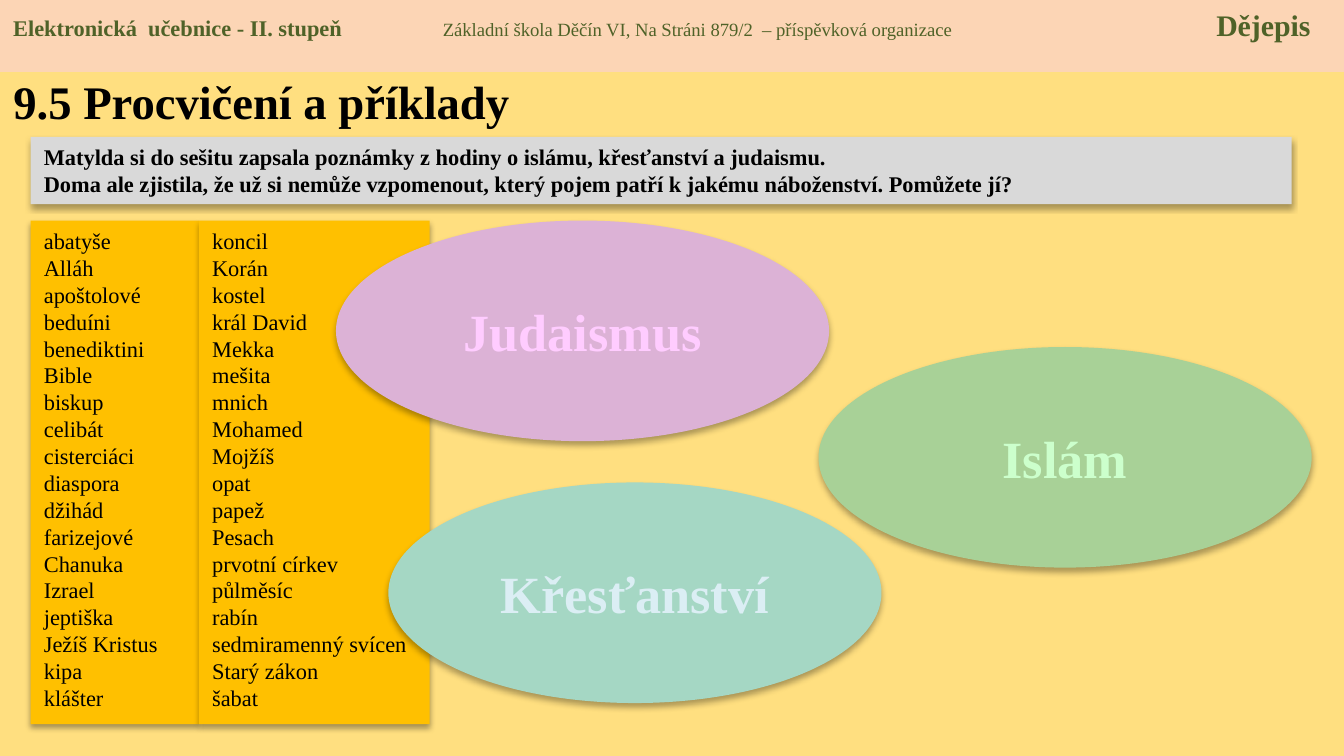
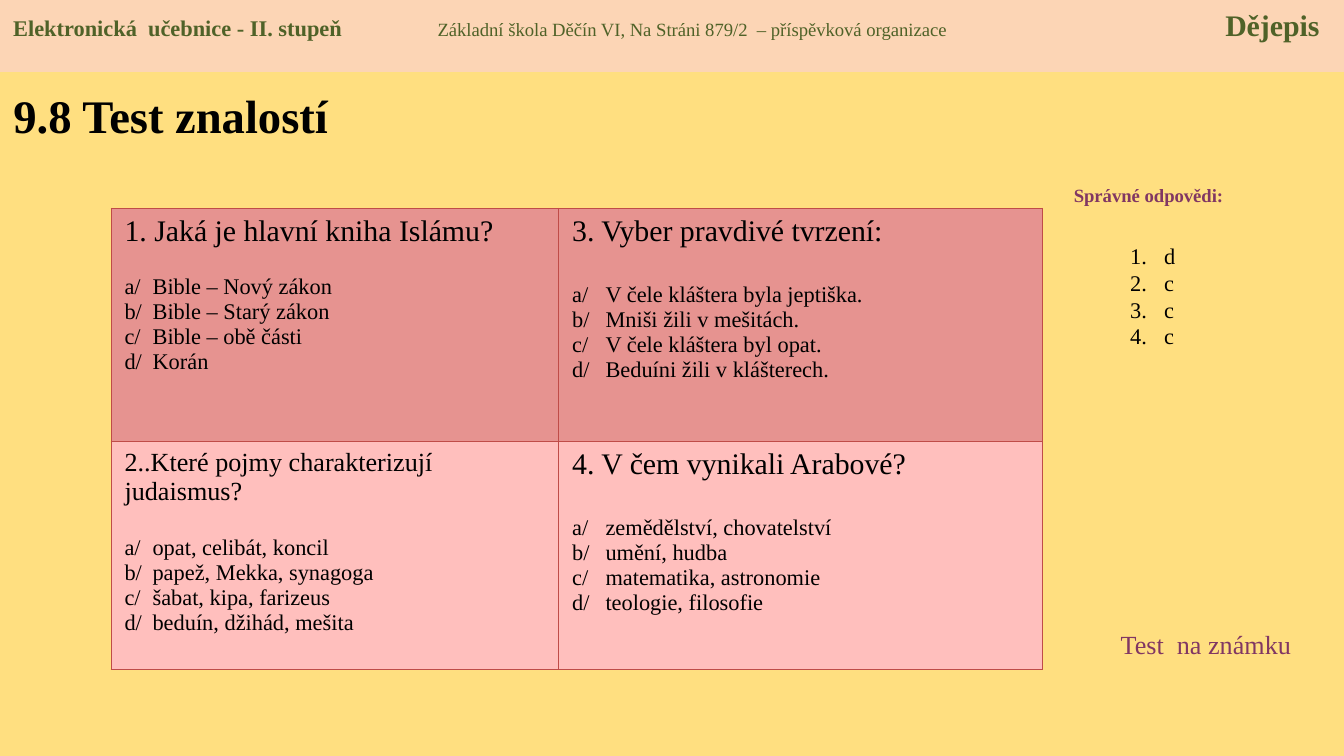
"""Build two history lesson slides: a word-sorting exercise and a quiz."""
import dataclasses

import lxml.etree
import pptx
import pptx.dml.color
import pptx.enum.shapes
import pptx.enum.text
import pptx.oxml.ns
import pptx.util

Cm = pptx.util.Cm
Pt = pptx.util.Pt
RGBColor = pptx.dml.color.RGBColor
Shape = pptx.enum.shapes.MSO_SHAPE
Align = pptx.enum.text.PP_ALIGN
Anchor = pptx.enum.text.MSO_ANCHOR
qn = pptx.oxml.ns.qn

FONT = "Times New Roman"
SAND = RGBColor(0xFF, 0xDF, 0x80)
PEACH = RGBColor(0xFC, 0xD5, 0xB5)
OLIVE = RGBColor(0x4F, 0x62, 0x28)
GREY = RGBColor(0xD9, 0xD9, 0xD9)
AMBER = RGBColor(0xFF, 0xC0, 0x00)
BLACK = RGBColor(0x00, 0x00, 0x00)
PLUM = RGBColor(0x81, 0x37, 0x63)
BRICK = RGBColor(0xBF, 0x4C, 0x48)
ROSE = RGBColor(0xE6, 0x93, 0x90)
PINK = RGBColor(0xFF, 0xBF, 0xBD)
LILAC = RGBColor(0xDC, 0xB2, 0xD6)
LILAC_TEXT = RGBColor(0xFF, 0xCC, 0xFF)
GREEN = RGBColor(0xA8, 0xD1, 0x97)
GREEN_TEXT = RGBColor(0xCC, 0xFF, 0xCC)
TEAL = RGBColor(0xA5, 0xD7, 0xC4)
TEAL_TEXT = RGBColor(0xDB, 0xEE, 0xF4)

LIST_SPACING = Pt(14.4)
SLIDE_WIDTH, SLIDE_HEIGHT = 25.4, 14.29
WORDS = (
    ("abatyše", "Alláh", "apoštolové", "beduíni", "benediktini", "Bible",
     "biskup", "celibát", "cisterciáci", "diaspora", "džihád", "farizejové",
     "Chanuka", "Izrael", "jeptiška", "Ježíš Kristus", "kipa", "klášter"),
    ("koncil", "Korán", "kostel", "král David", "Mekka", "mešita", "mnich",
     "Mohamed", "Mojžíš", "opat", "papež", "Pesach", "prvotní církev",
     "půlměsíc", "rabín", "sedmiramenný svícen", "Starý zákon", "šabat"),
)
TASK = (
    "Matylda si do sešitu zapsala poznámky z hodiny o islámu, křesťanství a judaismu.",
    "Doma ale zjistila, že už si nemůže vzpomenout, který pojem patří k jakému "
    "náboženství. Pomůžete jí?",
)
RELIGIONS = (
    ("Judaismus", 0, 0, LILAC, LILAC_TEXT),
    ("Islám", 9.12, 2.39, GREEN, GREEN_TEXT),
    ("Křesťanství", 0.99, 4.95, TEAL, TEAL_TEXT),
)
QUIZ = (
    (("1. Jaká je hlavní kniha Islámu?", 16, 14,
      ("Bible – Nový zákon", "Bible – Starý zákon", "Bible – obě části", "Korán")),
     ("3. Vyber pravdivé tvrzení:", 16, 18.5,
      ("V čele kláštera byla jeptiška.", "Mniši žili v mešitách.",
       "V čele kláštera byl opat.", "Beduíni žili v klášterech."))),
    (("2..Které pojmy charakterizují judaismus?", 14, 16,
      ("opat, celibát, koncil", "papež, Mekka, synagoga",
       "šabat, kipa, farizeus", "beduín, džihád, mešita")),
     ("4. V čem vynikali Arabové?", 16, 18.5,
      ("zemědělství, chovatelství", "umění, hudba",
       "matematika, astronomie", "teologie, filosofie"))),
)


@dataclasses.dataclass
class Area:
    """A rectangle in centimetres."""
    left: float
    top: float
    width: float
    height: float

    def lengths(self):
        """Return the four sides as slide lengths."""
        return [Cm(side) for side in (self.left, self.top, self.width, self.height)]

    def inner(self, left, top, width, height):
        """Return an area offset from this one's corner."""
        return Area(self.left + left, self.top + top, width, height)


def add_run(para, text, size, color=BLACK, bold=False):
    """Append one formatted run."""
    span = para.add_run()
    span.text = text
    span.font.name = FONT
    span.font.size = Pt(size)
    span.font.bold = bold
    span.font.color.rgb = color


def next_para(frame, first):
    """Return the first paragraph of a frame or a new one."""
    return frame.paragraphs[0] if first else frame.add_paragraph()


def add_tabs(para, stops):
    """Set tab stops given as pairs of centimetres and alignment."""
    tab_list = lxml.etree.SubElement(para._p.get_or_add_pPr(), qn("a:tabLst"))
    for position, align in stops:
        lxml.etree.SubElement(tab_list, qn("a:tab"), pos=str(Cm(position)), algn=align)


def add_lines(frame, lines, size, color=BLACK, bold=False, align=Align.LEFT, spacing=None):
    """Write one single-run paragraph for each line."""
    frame.word_wrap = True
    for index, line in enumerate(lines):
        para = next_para(frame, index == 0)
        para.alignment = align
        if spacing:
            para.line_spacing = spacing
        add_run(para, line, size, color, bold)


def add_panel(page, kind, area, fill, shadow=None):
    """Add an unlined filled shape; shadow is blur, distance and opacity."""
    panel = page.shapes.add_shape(kind, *area.lengths())
    panel.fill.solid()
    panel.fill.fore_color.rgb = fill
    panel.line.fill.background()
    panel.shadow.inherit = False
    panel.text_frame.vertical_anchor = Anchor.TOP
    if shadow:
        blur, distance, opacity = shadow
        effects = panel._element.spPr.find(qn("a:effectLst"))
        outer = lxml.etree.SubElement(
            effects, qn("a:outerShdw"), blurRad=str(Pt(blur)), dist=str(Pt(distance)),
            dir="5400000", algn="ctr", rotWithShape="0")
        tint = lxml.etree.SubElement(outer, qn("a:srgbClr"), val=str(BLACK))
        lxml.etree.SubElement(tint, qn("a:alpha"), val=str(opacity * 1000))
    return panel


def add_text(page, area, lines, size, **style):
    """Add a text box and return it."""
    box = page.shapes.add_textbox(*area.lengths())
    add_lines(box.text_frame, lines, size, **style)
    return box


def add_header(page, area, school_stop, subject_stop):
    """Draw the band with the textbook, school and subject."""
    frame = add_panel(page, Shape.RECTANGLE, area, PEACH).text_frame
    frame.word_wrap = True
    para = frame.paragraphs[0]
    para.alignment = Align.LEFT
    add_tabs(para, ((school_stop, "l"), (subject_stop, "r")))
    add_run(para, "Elektronická  učebnice - II. stupeň\t", 12, OLIVE, True)
    add_run(para, "Základní škola Děčín VI, Na Stráni 879/2  – příspěvková organizace\t", 10, OLIVE)
    add_run(para, "Dějepis", 16, OLIVE, True)


def add_page(deck, title, title_area, school_stop, subject_stop):
    """Add a slide with the shared background, title style and header."""
    page = deck.slides.add_slide(deck.slide_layouts[5])
    page.background.fill.solid()
    page.background.fill.fore_color.rgb = SAND
    heading = page.shapes.title
    heading.left, heading.top, heading.width, heading.height = title_area.lengths()
    frame = heading.text_frame
    frame.auto_size = pptx.enum.text.MSO_AUTO_SIZE.NONE
    frame.vertical_anchor = Anchor.MIDDLE
    add_lines(frame, [title], 25, bold=True)
    add_header(page, Area(0, 0, SLIDE_WIDTH, 1.36), school_stop, subject_stop)
    return page


def add_task(page, area):
    """Draw the grey assignment panel."""
    panel = add_panel(page, Shape.RECTANGLE, area, GREY, (3.1, 1.8, 35))
    add_lines(panel.text_frame, TASK, 12, bold=True, spacing=LIST_SPACING)


def add_word_lists(page, area, split):
    """Draw the two word columns, divided at the given width."""
    columns = (area.inner(0, 0, split, area.height),
               area.inner(split, 0, area.width - split, area.height))
    for column, words in zip(columns, WORDS):
        panel = add_panel(page, Shape.RECTANGLE, column, AMBER, (3.1, 1.8, 35))
        add_lines(panel.text_frame, words, 12, spacing=LIST_SPACING)


def add_religions(page, area):
    """Draw the three ellipses that the words are sorted into."""
    for name, left, top, fill, color in RELIGIONS:
        ellipse = add_panel(page, Shape.OVAL, area.inner(left, top, 9.32, 4.17),
                            fill, (3.5, 2.2, 32))
        ellipse.text_frame.vertical_anchor = Anchor.MIDDLE
        add_lines(ellipse.text_frame, [name], 28, color, True, Align.CENTER)


def add_borders(cell):
    """Line all four sides of a table cell."""
    properties = cell._tc.get_or_add_tcPr()
    for side in ("a:lnL", "a:lnR", "a:lnT", "a:lnB"):
        line = lxml.etree.SubElement(properties, qn(side), w=str(Pt(0.75)))
        fill = lxml.etree.SubElement(line, qn("a:solidFill"))
        lxml.etree.SubElement(fill, qn("a:srgbClr"), val=str(BRICK))


def fill_question(cell, question, size, gap, options, stop):
    """Write a question and its lettered options into a cell."""
    frame = cell.text_frame
    add_lines(frame, [question], size)
    for index, (letter, option) in enumerate(zip("abcd", options)):
        para = frame.add_paragraph()
        if index == 0:
            para.space_before = Pt(gap)
        add_tabs(para, [(stop, "l")])
        add_run(para, f"{letter}/\t{option}", 12)


def add_quiz(page, area):
    """Draw the table of four questions."""
    table = page.shapes.add_table(2, 2, *area.lengths()).table
    table.first_row = table.horz_banding = False
    left_width, top_height = 8.46, 4.4
    for column, width in zip(table.columns, (left_width, area.width - left_width)):
        column.width = Cm(width)
    for row, height in zip(table.rows, (top_height, area.height - top_height)):
        row.height = Cm(height)
    for row, (questions, fill) in enumerate(zip(QUIZ, (ROSE, PINK))):
        for column, (content, stop) in enumerate(zip(questions, (0.53, 0.63))):
            cell = table.cell(row, column)
            add_borders(cell)
            cell.fill.solid()
            cell.fill.fore_color.rgb = fill
            fill_question(cell, *content, stop)


def add_answers(page, area):
    """Write the key heading, the numbered answers and the closing label."""
    add_text(page, area.inner(0, 0, 3.99, 0.69), ["Správné odpovědi:"], 10,
             color=PLUM, bold=True, align=Align.CENTER)
    box = add_text(page, area.inner(1.4, 1.1, 1.4, 2.6), "dccc", 12, spacing=LIST_SPACING)
    for para in box.text_frame.paragraphs:
        properties = para._p.get_or_add_pPr()
        properties.set("marL", str(Cm(0.64)))
        properties.set("indent", str(-Cm(0.64)))
        lxml.etree.SubElement(properties, qn("a:buFont"), typeface=FONT)
        lxml.etree.SubElement(properties, qn("a:buAutoNum"), type="arabicPeriod")
    add_text(page, area.inner(1.22, 8.41, 3.99, 0.86), ["Test  na známku"], 14, color=PLUM)


def build_exercise(deck):
    """Build the word-sorting slide."""
    page = add_page(deck, "9.5 Procvičení a příklady", Area(0, 1.19, 12.5, 1.42), 8.12, 24.52)
    add_task(page, Area(0.58, 2.59, 23.83, 1.27))
    add_word_lists(page, Area(0.58, 4.17, 7.54, 9.52), 3.18)
    add_religions(page, Area(6.35, 4.17, 18.44, 9.12))


def build_test(deck):
    """Build the quiz slide."""
    page = add_page(deck, "9.8 Test znalostí", Area(0, 1.35, 9.91, 1.65), 8.02, 24.69)
    add_quiz(page, Area(2.1, 3.94, 17.6, 8.72))
    add_answers(page, Area(19.71, 3.35, 5.21, 9.27))


def main():
    """Create and save the deck."""
    deck = pptx.Presentation()
    deck.slide_width, deck.slide_height = Cm(SLIDE_WIDTH), Cm(SLIDE_HEIGHT)
    build_exercise(deck)
    build_test(deck)
    deck.save("out.pptx")


if __name__ == "__main__":
    main()
